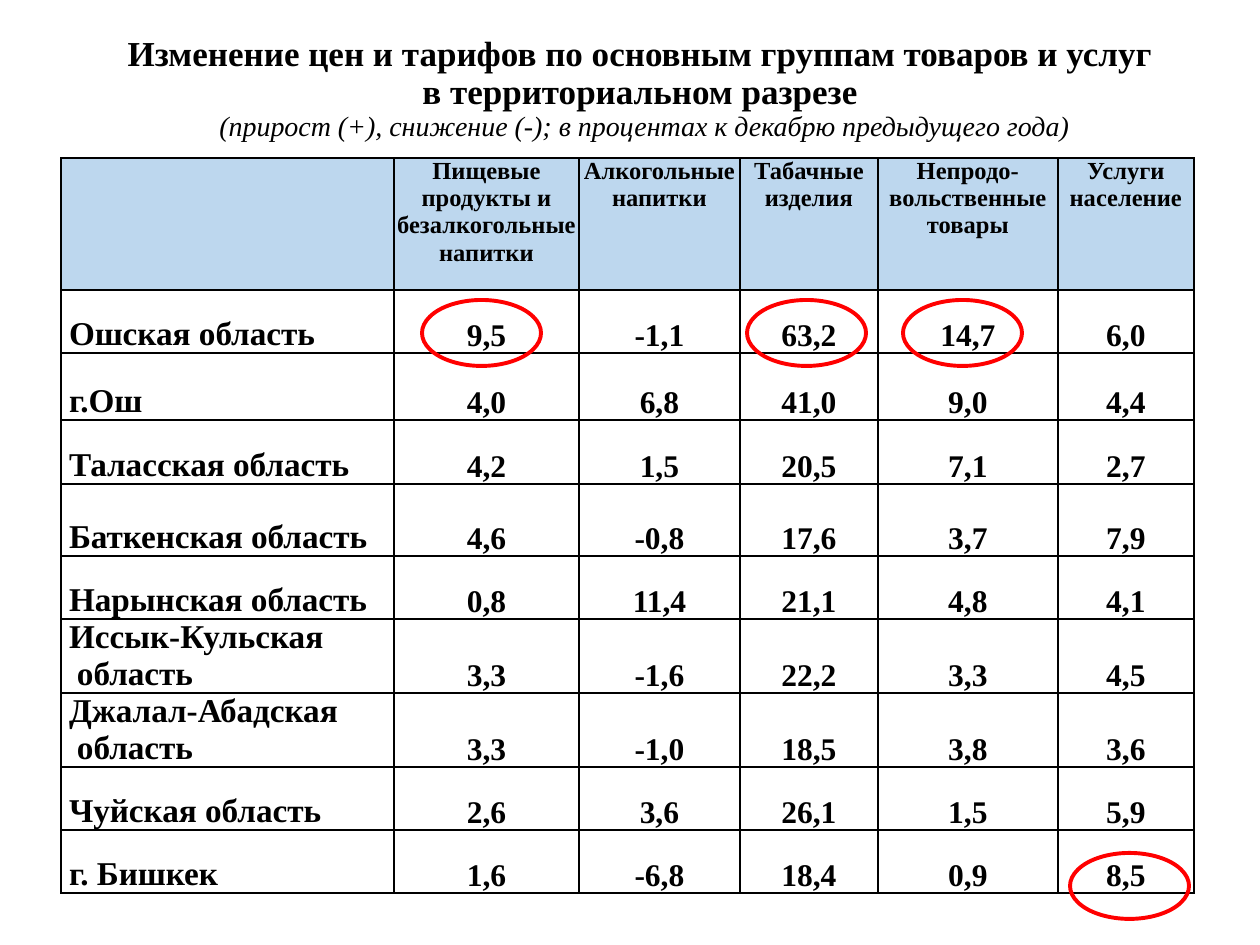
from typing import Any, NamedTuple

from lxml.etree import SubElement
from pptx import Presentation
from pptx.dml.color import RGBColor
from pptx.enum.shapes import MSO_SHAPE
from pptx.enum.text import MSO_ANCHOR, PP_ALIGN
from pptx.oxml.ns import qn
from pptx.util import Emu, Pt

BLACK = RGBColor(0, 0, 0)
RED = RGBColor(255, 0, 0)
BLUE = RGBColor(0xBD, 0xD7, 0xEE)
FACE = "Times New Roman"
SCALE = 914400 / 126


class Region(NamedTuple):
    name: str
    height: int
    values: str


class Ring(NamedTuple):
    left: int
    top: int


HEADS = [
    "",
    "Пищевые продукты и безалкогольные напитки",
    "Алкогольные напитки",
    "Табачные изделия",
    "Непродо-\nвольственные товары",
    "Услуги население",
]
WIDTHS = [333, 185, 161, 138, 180, 136]
HEAD_H = 132
REGIONS = [
    Region("Ошская область", 63, "9,5 -1,1 63,2 14,7 6,0"),
    Region("г.Ош", 67, "4,0 6,8 41,0 9,0 4,4"),
    Region("Таласская область", 64, "4,2 1,5 20,5 7,1 2,7"),
    Region("Баткенская область", 72, "4,6 -0,8 17,6 3,7 7,9"),
    Region("Нарынская область", 63, "0,8 11,4 21,1 4,8 4,1"),
    Region("Иссык-Кульская\nобласть", 74, "3,3 -1,6 22,2 3,3 4,5"),
    Region("Джалал-Абадская\nобласть", 74, "3,3 -1,0 18,5 3,8 3,6"),
    Region("Чуйская область", 63, "2,6 3,6 26,1 1,5 5,9"),
    Region("г. Бишкек", 63, "1,6 -6,8 18,4 0,9 8,5"),
]
RINGS = [Ring(1070, 853), Ring(747, 300), Ring(903, 300), Ring(422, 300)]

HEAD = {"size": Pt(14), "bold": True}
LABEL = {"size": Pt(19), "bold": True}
VALUE = {"size": Pt(18), "bold": True}
TITLE = {"size": Pt(20), "bold": True}
NOTE = {"size": Pt(16), "bold": False, "italic": True}


def px(n: int) -> Emu:
    return Emu(round(n * SCALE))


def apply(item: Any, form: dict) -> None:
    for key, value in form.items():
        setattr(item, key, value)


def style(font: Any, form: dict) -> None:
    apply(font, {"name": FACE, **form})
    font.color.rgb = BLACK


def border(cell: Any) -> None:
    props = cell._tc.get_or_add_tcPr()
    for side in "LRTB":
        line = SubElement(props, qn(f"a:ln{side}"), w=str(Pt(1)))
        fill = SubElement(line, qn("a:solidFill"))
        SubElement(fill, qn("a:srgbClr"), val=str(BLACK))


def fill_cell(cell: Any, text: str, form: dict, left: int = 0) -> None:
    """Write the cell; a positive left indents each further line by as much."""
    border(cell)
    apply(cell, {
        "margin_left": px(left), "margin_right": 0,
        "margin_top": 0, "margin_bottom": 0,
        "vertical_anchor": MSO_ANCHOR.TOP if form is HEAD else MSO_ANCHOR.BOTTOM,
    })
    if form is HEAD:
        cell.fill.solid()
        cell.fill.fore_color.rgb = BLUE
    else:
        cell.fill.background()
    cell.text = text
    paras = cell.text_frame.paragraphs
    for i, para in enumerate(paras):
        para.alignment = PP_ALIGN.LEFT if left else PP_ALIGN.CENTER
        style(para.font, form)
        for run in para.runs:
            style(run.font, form)
        if left and i:
            para._p.get_or_add_pPr().set("marL", str(px(left * i)))
    if left and len(paras) == 1:
        paras[0].space_after = Pt(2)


def add_grid(slide: Any) -> None:
    heights = [HEAD_H] + [r.height for r in REGIONS]
    grid = slide.shapes.add_table(
        len(heights), len(WIDTHS), px(61), px(158),
        px(sum(WIDTHS)), px(sum(heights))).table
    apply(grid, {"first_row": False, "horz_banding": False})
    for col, width in zip(grid.columns, WIDTHS):
        col.width = px(width)
    for row, height in zip(grid.rows, heights):
        row.height = px(height)
    for c, head in enumerate(HEADS):
        fill_cell(grid.cell(0, c), head, HEAD)
    for r, region in enumerate(REGIONS, 1):
        fill_cell(grid.cell(r, 0), region.name, LABEL, 8)
        for c, value in enumerate(region.values.split(), 1):
            fill_cell(grid.cell(r, c), value, VALUE)


def add_title(slide: Any) -> None:
    frame = slide.shapes.add_textbox(px(71), px(20), px(1147), px(139)).text_frame
    apply(frame, {"word_wrap": True, "vertical_anchor": MSO_ANCHOR.MIDDLE})
    para = frame.paragraphs[0]
    apply(para, {"alignment": PP_ALIGN.CENTER, "line_spacing": 0.9})
    lines = [
        ("Изменение цен и тарифов по основным группам товаров и услуг ", TITLE),
        ("в территориальном разрезе ", TITLE),
        ("(прирост (+), снижение (-); в процентах к декабрю предыдущего года)", NOTE),
    ]
    for i, (text, form) in enumerate(lines):
        if i:
            para.add_line_break()
        run = para.add_run()
        run.text = text
        style(run.font, form)


def add_ring(slide: Any, ring: Ring) -> None:
    oval = slide.shapes.add_shape(
        MSO_SHAPE.OVAL, px(ring.left), px(ring.top), px(119), px(66))
    oval.shadow.inherit = False
    oval.fill.background()
    oval.line.color.rgb = RED
    oval.line.width = Pt(2.25)


def main() -> None:
    deck = Presentation()
    apply(deck, {"slide_width": px(1260), "slide_height": px(945)})
    slide = deck.slides.add_slide(deck.slide_layouts[6])
    add_grid(slide)
    add_title(slide)
    for ring in RINGS:
        add_ring(slide, ring)
    deck.save("out.pptx")


if __name__ == "__main__":
    main()
